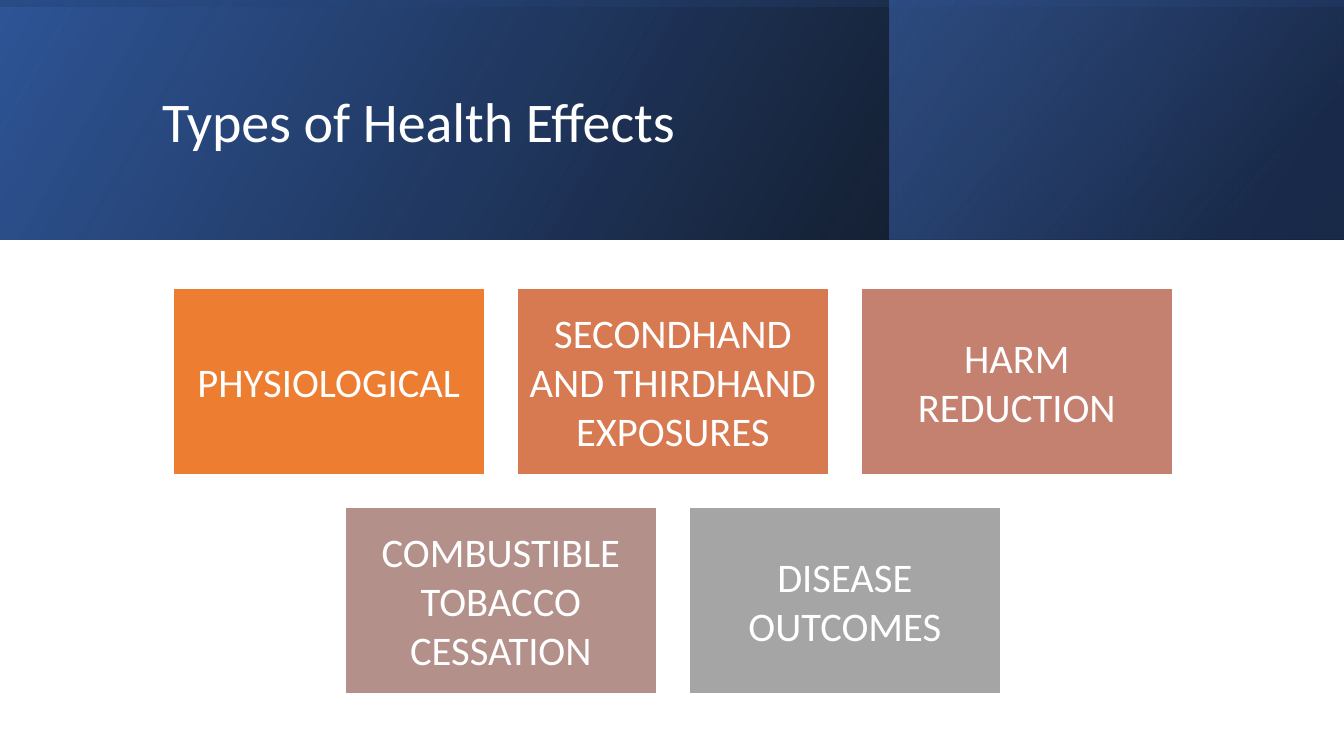
from dataclasses import dataclass

from lxml.etree import SubElement
from pptx import Presentation
from pptx.dml.color import RGBColor
from pptx.enum.shapes import MSO_SHAPE as Shape
from pptx.enum.text import MSO_ANCHOR as Anchor, MSO_AUTO_SIZE as AutoSize, PP_ALIGN as Align
from pptx.oxml.ns import qn
from pptx.util import Emu, Pt

FONT = "Calibri"
WHITE = "FFFFFF"
PAGE_WIDTH, PAGE_HEIGHT = 1344, 756
BANNER_HEIGHT = 240


@dataclass
class Stop:
    position: float
    colour: str
    opacity: int


@dataclass
class Band:
    left: int
    top: int
    width: int
    height: int
    angle: int
    stops: tuple[Stop, Stop]
    rotation: int = 0


@dataclass
class Card:
    label: str
    colour: str


# The upright band is turned by 270 degrees to lie across the banner
SHIFT = (PAGE_WIDTH - BANNER_HEIGHT) // 2
BANDS = [
    Band(0, 0, PAGE_WIDTH, BANNER_HEIGHT, 330,
         (Stop(0, "000000", 96), Stop(1, "2F5597", 100))),
    Band(890, 0, 453, BANNER_HEIGHT, 320,
         (Stop(0.19, "203864", 68), Stop(1, "4472C4", 48))),
    Band(SHIFT, -SHIFT, BANNER_HEIGHT, PAGE_WIDTH, 350,
         (Stop(0.23, "2F5597", 16), Stop(0.99, "000000", 45)), 270),
]

CARD_ROWS = [
    [Card("PHYSIOLOGICAL", "ED7D31"),
     Card("SECONDHAND AND THIRDHAND EXPOSURES", "D87A51"),
     Card("HARM REDUCTION", "C48170")],
    [Card("COMBUSTIBLE TOBACCO CESSATION", "B4908B"),
     Card("DISEASE OUTCOMES", "A5A5A5")],
]
CARD_WIDTH, CARD_HEIGHT, CARD_GAP = 312, 187, 32
CARDS_CENTRE, CARDS_TOP = 673, 288


def px(length: int) -> Emu:
    return Emu(round(length * 914400 / 100.8))


def rgb(colour: str) -> RGBColor:
    return RGBColor.from_string(colour)


def add_span(para, text: str, size: float) -> None:
    span = para.add_run()
    span.text = text
    span.font.name = FONT
    span.font.size = Pt(size)
    span.font.color.rgb = rgb(WHITE)


def add_box(page, left: int, top: int, width: int, height: int):
    box = page.shapes.add_shape(
        Shape.RECTANGLE, px(left), px(top), px(width), px(height))
    box.shadow.inherit = False
    return box


def draw_band(page, band: Band) -> None:
    box = add_box(page, band.left, band.top, band.width, band.height)
    box.rotation = band.rotation
    box._element.spPr.find(qn("a:xfrm")).set("flipH", "1")
    box.line.fill.background()
    box.fill.gradient()
    box.fill.gradient_angle = 360 - band.angle
    for target, stop in zip(box.fill.gradient_stops, band.stops):
        target.position = stop.position
        target.color.rgb = rgb(stop.colour)
    # Opacity of each gradient stop
    for node, stop in zip(box._element.spPr.iter(qn("a:srgbClr")), band.stops):
        SubElement(node, qn("a:alpha")).set("val", str(stop.opacity * 1000))


def draw_card(page, card: Card, left: int, top: int) -> None:
    box = add_box(page, left, top, CARD_WIDTH, CARD_HEIGHT)
    box.fill.solid()
    box.fill.fore_color.rgb = rgb(card.colour)
    box.line.color.rgb = rgb(WHITE)
    box.line.width = Pt(1)
    frame = box.text_frame
    frame.word_wrap = True
    frame.vertical_anchor = Anchor.MIDDLE
    frame.margin_left = frame.margin_right = px(12)
    frame.margin_top = frame.margin_bottom = px(12)
    para = frame.paragraphs[0]
    para.alignment = Align.CENTER
    add_span(para, card.label, 29)


def draw_title(page, text: str) -> None:
    title = page.shapes.title
    title.left, title.top = px(152), px(38)
    title.width, title.height = px(1072), px(173)
    frame = title.text_frame
    frame.auto_size = AutoSize.NONE
    frame.vertical_anchor = Anchor.MIDDLE
    para = frame.paragraphs[0]
    para.alignment = Align.LEFT
    para.line_spacing = 0.9
    add_span(para, text, 40)


def main() -> None:
    deck = Presentation()
    deck.slide_width, deck.slide_height = px(PAGE_WIDTH), px(PAGE_HEIGHT)
    page = deck.slides.add_slide(deck.slide_layouts.get_by_name("Title Only"))

    # Banner, with the title raised above its bands
    for band in BANDS:
        draw_band(page, band)
    draw_title(page, "Types of Health Effects")
    page.shapes._spTree.append(page.shapes.title._element)

    # Centred rows of cards
    for row, cards in enumerate(CARD_ROWS):
        row_width = len(cards) * (CARD_WIDTH + CARD_GAP) - CARD_GAP
        row_left = CARDS_CENTRE - row_width // 2
        top = CARDS_TOP + row * (CARD_HEIGHT + CARD_GAP)
        for column, card in enumerate(cards):
            draw_card(page, card, row_left + column * (CARD_WIDTH + CARD_GAP), top)

    deck.save("out.pptx")


if __name__ == "__main__":
    main()
